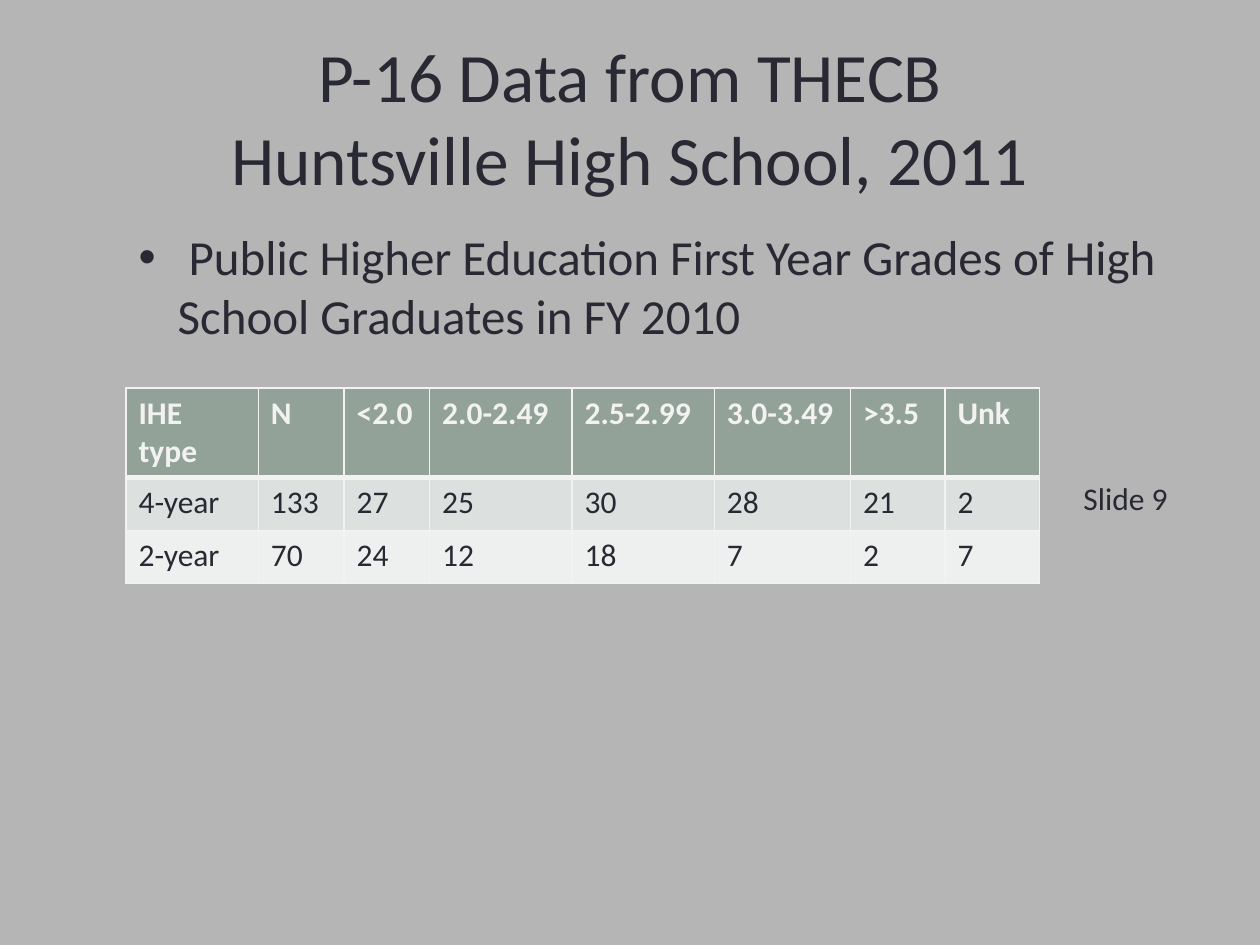
from dataclasses import dataclass

from pptx import Presentation
from pptx.dml.color import RGBColor
from pptx.enum import text
from pptx.oxml.ns import qn
from pptx.util import Inches, Pt
from lxml import etree


@dataclass(frozen=True)
class Theme:
    font: str = "Calibri"
    background: str = "B5B5B5"
    ink: str = "292934"
    light: str = "F2F2F2"
    header: str = "93A299"
    bands: tuple[str, ...] = ("DCE0DE", "EEF0EF")
    title_size: float = 39.6
    body_size: float = 28
    small_size: float = 18


@dataclass(frozen=True)
class Column:
    heading: str
    width: float
    values: tuple[str, ...]


THEME = Theme()
COLUMNS = (
    Column("IHE type", 1.05, ("4-year", "2-year")),
    Column("N", 0.68, ("133", "70")),
    Column("<2.0", 0.68, ("27", "24")),
    Column("2.0-2.49", 1.13, ("25", "12")),
    Column("2.5-2.99", 1.13, ("30", "18")),
    Column("3.0-3.49", 1.08, ("28", "7")),
    Column(">3.5", 0.75, ("21", "2")),
    Column("Unk", 0.75, ("2", "7")),
)
ROW_HEIGHTS = (0.61, 0.42, 0.42)


def place(sp, left: float, top: float, width: float, height: float) -> None:
    sp.left, sp.top = Inches(left), Inches(top)
    sp.width, sp.height = Inches(width), Inches(height)


def write(p, words: str, size: float, color: str = THEME.ink, bold: bool = False) -> None:
    p.text = words
    for r in p.runs:
        r.font.name = THEME.font
        r.font.size = Pt(size)
        r.font.bold = bold
        r.font.color.rgb = RGBColor.from_string(color)


def set_bullet(p, char: str, left: float, indent: float) -> None:
    """Give the paragraph a bullet with a hanging indent, in inches."""
    pPr = p._p.get_or_add_pPr()
    pPr.set("marL", str(Inches(left)))
    pPr.set("indent", str(Inches(indent)))
    etree.SubElement(pPr, qn("a:buChar"), char=char)


def set_borders(cell, color: str, bottom: float) -> None:
    """Draw 1 pt cell borders, with the bottom one as wide as given."""
    tcPr = cell._tc.get_or_add_tcPr()
    for i, (side, width) in enumerate((("L", 1), ("R", 1), ("T", 1), ("B", bottom))):
        ln = etree.Element(qn(f"a:ln{side}"), w=str(Pt(width)))
        fill = etree.SubElement(ln, qn("a:solidFill"))
        etree.SubElement(fill, qn("a:srgbClr"), val=color)
        tcPr.insert(i, ln)


def fill_cell(cell, words: str, row: int) -> None:
    is_header = row == 0
    fill = THEME.header if is_header else THEME.bands[row - 1]
    cell.fill.solid()
    cell.fill.fore_color.rgb = RGBColor.from_string(fill)
    set_borders(cell, THEME.light, 3 if is_header else 1)
    color = THEME.light if is_header else THEME.ink
    write(cell.text_frame.paragraphs[0], words, THEME.small_size, color, is_header)


def add_grades_table(s, left: float, top: float) -> None:
    width = sum(c.width for c in COLUMNS)
    frame = s.shapes.add_table(len(ROW_HEIGHTS), len(COLUMNS), Inches(left), Inches(top),
                               Inches(width), Inches(sum(ROW_HEIGHTS)))
    table = frame.table
    for row, height in zip(table.rows, ROW_HEIGHTS):
        row.height = Inches(height)
    for j, column in enumerate(COLUMNS):
        table.columns[j].width = Inches(column.width)
        for i, words in enumerate((column.heading, *column.values)):
            # The row under the header shares its thick border.
            fill_cell(table.cell(i, j), words, i)
    for cell in table.rows[1].cells:
        cell._tc.tcPr.find(qn("a:lnT")).set("w", str(Pt(3)))


def main() -> None:
    prs = Presentation()
    prs.slide_width, prs.slide_height = Inches(10), Inches(7.5)
    s = prs.slides.add_slide(prs.slide_layouts[1])
    s.background.fill.solid()
    s.background.fill.fore_color.rgb = RGBColor.from_string(THEME.background)

    title = s.shapes.title
    place(title, 0.5, 0.3, 9, 1.25)
    tf = title.text_frame
    tf.auto_size = text.MSO_AUTO_SIZE.NONE
    tf.vertical_anchor = text.MSO_ANCHOR.MIDDLE
    p = tf.paragraphs[0]
    p.alignment = text.PP_ALIGN.CENTER
    write(p, "P-16 Data from THECB\vHuntsville High School, 2011", THEME.title_size)

    body = s.placeholders[1]
    place(body, 0.5, 1.75, 9, 4.95)
    tf = body.text_frame
    tf.auto_size = text.MSO_AUTO_SIZE.NONE
    p = tf.paragraphs[0]
    p.level = 1
    p.space_before = Pt(0)
    set_bullet(p, "•", 0.81, -0.31)
    write(p, " Public Higher Education First Year Grades of High School Graduates in FY 2010",
          THEME.body_size)

    add_grades_table(s, 1, 3.08)

    label = s.shapes.add_textbox(Inches(8.5), Inches(3.75), Inches(0.92), Inches(0.4))
    tf = label.text_frame
    tf.word_wrap = True
    tf.auto_size = text.MSO_AUTO_SIZE.SHAPE_TO_FIT_TEXT
    write(tf.paragraphs[0], "Slide 9", THEME.small_size)

    prs.save("out.pptx")


if __name__ == "__main__":
    main()
